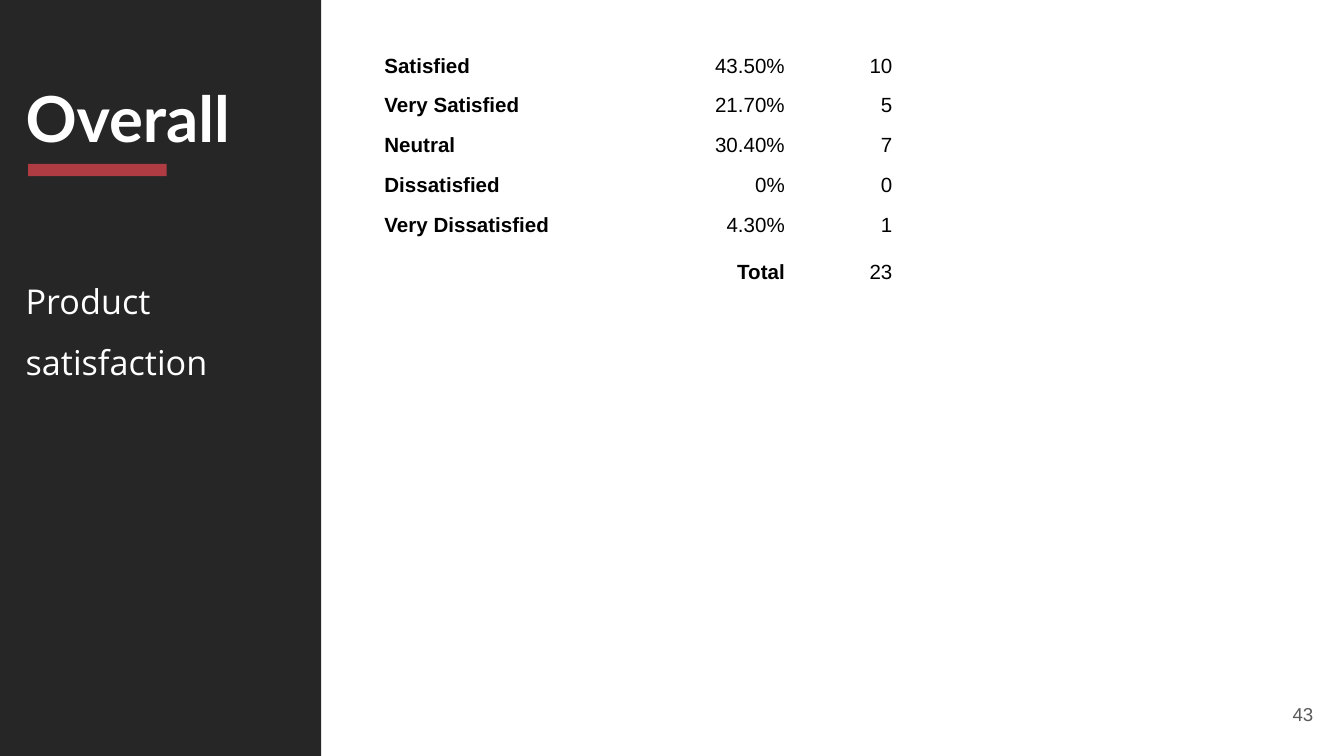
from lxml.etree import SubElement
from pptx import Presentation
from pptx.dml.color import RGBColor
from pptx.enum.shapes import MSO_SHAPE as Shape
from pptx.enum.text import MSO_ANCHOR as Anchor, PP_ALIGN as Align
from pptx.oxml.ns import qn
from pptx.util import Inches, Pt

TITLE = "Overall"
TOPIC = "Product satisfaction"
PAGE = "43"
RATINGS = [
    ("Satisfied", "43.50%", "10"),
    ("Very Satisfied", "21.70%", "5"),
    ("Neutral", "30.40%", "7"),
    ("Dissatisfied", "0%", "0"),
    ("Very Dissatisfied", "4.30%", "1"),
    ("", "Total", "23"),
]
BOLD = {answer for answer, _, _ in RATINGS} | {"Total"}
COLUMNS = (1.89, 1.15, 0.8)
TABLE_HEIGHT, TOTAL_HEIGHT = 1.83, 0.35
ANSWERS = len(RATINGS) - 1
ROWS = [(TABLE_HEIGHT - TOTAL_HEIGHT) / ANSWERS] * ANSWERS + [TOTAL_HEIGHT]
WIDTH = 10
HEIGHT = WIDTH * 9 / 16
DARK, RED, WHITE, GREY, BLACK = "262626", "AF3C43", "FFFFFF", "595959", "000000"


def color(value):
    """Turn a hex string into a colour."""
    return RGBColor.from_string(value)


def place(part, left, top, width, height):
    """Set a part's position and size in inches."""
    part.left, part.top = Inches(left), Inches(top)
    part.width, part.height = Inches(width), Inches(height)


def write(frame, text, size, font, ink, bold=False, align=Align.LEFT, spacing=1.0):
    """Write one formatted paragraph into a text frame."""
    paragraph = frame.paragraphs[0]
    paragraph.alignment = align
    paragraph.line_spacing = spacing
    paragraph.space_before = Pt(0)
    paragraph.font.size = Pt(size)
    if text:
        run = paragraph.add_run()
        run.text = text
        run.font.name, run.font.size, run.font.bold = font, Pt(size), bold
        run.font.color.rgb = color(ink)
    return paragraph


def set_frame(frame, anchor=Anchor.TOP):
    """Give a text frame wrapping, an anchor and equal insets."""
    frame.word_wrap = True
    frame.vertical_anchor = anchor
    frame.margin_left = frame.margin_right = Inches(0.1)
    frame.margin_top = frame.margin_bottom = Inches(0.1)


def add_bar(slide, fill, *box):
    """Add a plain filled rectangle."""
    bar = slide.shapes.add_shape(Shape.RECTANGLE, *map(Inches, box))
    bar.shadow.inherit = False
    bar.fill.solid()
    bar.fill.fore_color.rgb = color(fill)
    bar.line.fill.background()
    return bar


def add_ratings(slide):
    """Add the table of answers, shares and counts."""
    table = slide.shapes.add_table(
        len(ROWS), len(COLUMNS), Inches(2.83), Inches(0.3),
        Inches(sum(COLUMNS)), Inches(TABLE_HEIGHT)).table
    table.first_row = table.horz_banding = False
    for column, width in zip(table.columns, COLUMNS):
        column.width = Inches(width)
    for row, height, texts in zip(table.rows, ROWS, RATINGS):
        row.height = Inches(height)
        for index, (cell, text) in enumerate(zip(row.cells, texts)):
            if "Total" in texts:
                cell.fill.solid()
                cell.fill.fore_color.rgb = color(WHITE)
            else:
                cell.fill.background()
            cell.vertical_anchor = Anchor.BOTTOM
            cell.margin_left = cell.margin_right = Inches(0.03)
            cell.margin_top = cell.margin_bottom = Inches(0.02)
            write(cell.text_frame, text, 11, "Arial", BLACK, text in BOLD,
                  Align.RIGHT if index else Align.LEFT, 1.15)


def main():
    """Build and save the slide."""
    deck = Presentation()
    deck.slide_width, deck.slide_height = Inches(WIDTH), Inches(HEIGHT)
    slide = deck.slides.add_slide(deck.slide_layouts[1])

    panel = add_bar(slide, DARK, -0.05, -0.01, 2.44, 5.64)
    title, topic = slide.placeholders
    title.element.addprevious(panel.element)

    place(title, 0.09, 0.49, 3.36, 1.57)
    set_frame(title.text_frame)
    write(title.text_frame, TITLE, 34, "Lato", WHITE, bold=True)

    place(topic, 0.09, 1.83, 2.09, 3)
    set_frame(topic.text_frame)
    paragraph = write(topic.text_frame, TOPIC, 18.3, "Open Sans", WHITE, spacing=1.5)
    properties = paragraph._p.get_or_add_pPr()
    properties.set("marL", "0")
    properties.set("indent", "0")
    SubElement(properties, qn("a:buNone"))
    properties.append(properties.find(qn("a:defRPr")))

    add_bar(slide, RED, 0.21, 1.22, 1.03, 0.09)
    page = slide.shapes.add_textbox(*map(Inches, (9.27, 5.1, 0.6, 0.43)))
    set_frame(page.text_frame, Anchor.MIDDLE)
    write(page.text_frame, PAGE, 10, "Arial", GREY, align=Align.RIGHT)
    add_ratings(slide)
    deck.save("out.pptx")


if __name__ == "__main__":
    main()
